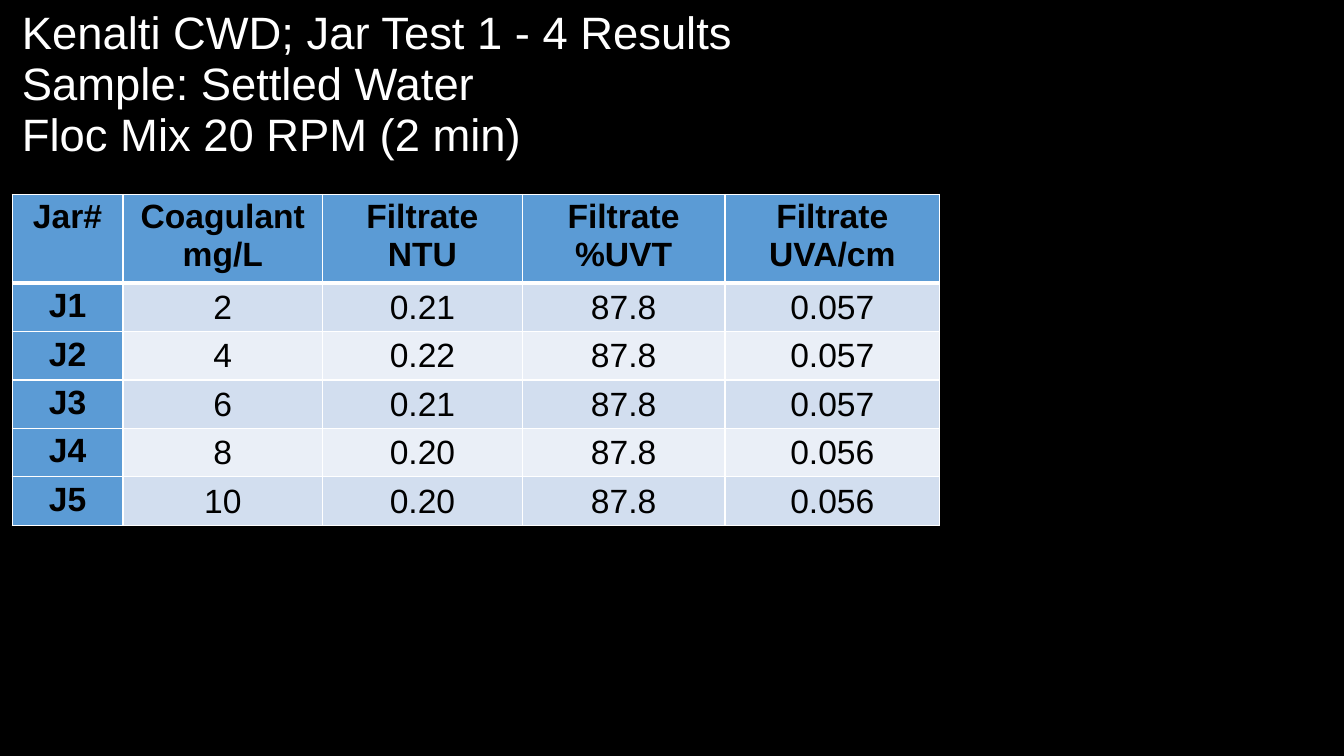
from lxml.etree import SubElement
from pptx import Presentation
from pptx.dml.color import RGBColor
from pptx.enum.text import MSO_ANCHOR as Anchor, PP_ALIGN as Align
from pptx.oxml.ns import qn
from pptx.util import Inches, Pt

COLORS = {
    "background": "000000",
    "title": "FFFFFF",
    "text": "000000",
    "border": "FFFFFF",
    "header": "5B9BD5",
    "odd_row": "D2DEEF",
    "even_row": "EAEFF7",
}
FONT = "Arial"
TITLE_LINES = [
    "Kenalti CWD; Jar Test 1 - 4 Results ",
    "Sample: Settled Water",
    "Floc Mix 20 RPM (2 min)",
]
RESULTS = [
    ["Jar#", "Coagulant\nmg/L", "Filtrate\nNTU", "Filtrate\n%UVT", "Filtrate\nUVA/cm"],
    ["J1", "2", "0.21", "87.8", "0.057"],
    ["J2", "4", "0.22", "87.8", "0.057"],
    ["J3", "6", "0.21", "87.8", "0.057"],
    ["J4", "8", "0.20", "87.8", "0.056"],
    ["J5", "10", "0.20", "87.8", "0.056"],
]
COLUMN_WIDTHS = [1.1, 1.98, 1.98, 2.01, 2.13]
HEADER_HEIGHT = 0.84
ROW_HEIGHT = 0.47


def rgb(name):
    return RGBColor.from_string(COLORS[name])


def style_text(para, size, color, bold=False):
    for span in para.runs:
        span.font.name = FONT
        span.font.size = Pt(size)
        span.font.bold = bold
        span.font.color.rgb = rgb(color)


def add_title(page):
    box = page.shapes.add_textbox(Inches(0.12), Inches(0.12), Inches(13.03), Inches(1.45))
    frame = box.text_frame
    frame.word_wrap = True
    frame.vertical_anchor = Anchor.MIDDLE
    para = frame.paragraphs[0]
    para.text = "\v".join(TITLE_LINES)
    para.line_spacing = 0.94
    style_text(para, 32.4, "title")


def set_borders(cell, top, bottom):
    """Draw the four cell edges; top and bottom widths are in points."""
    properties = cell._tc.get_or_add_tcPr()
    edges = {"a:lnL": 1, "a:lnR": 1, "a:lnT": top, "a:lnB": bottom}
    for index, (tag, width) in enumerate(edges.items()):
        line = SubElement(properties, qn(tag), w=str(Pt(width)))
        fill = SubElement(line, qn("a:solidFill"))
        SubElement(fill, qn("a:srgbClr"), val=COLORS["border"])
        properties.insert(index, line)


def fill_cell(cell, text, row, column):
    is_heading = row == 0 or column == 0
    if is_heading:
        color = "header"
        cell.margin_top = cell.margin_bottom = Inches(0.04)
    else:
        color = "odd_row" if row % 2 else "even_row"
        cell.vertical_anchor = Anchor.MIDDLE
        cell.margin_left = cell.margin_right = cell.margin_top = Inches(0.01)
        cell.margin_bottom = Inches(0)
    cell.fill.solid()
    cell.fill.fore_color.rgb = rgb(color)
    cell.text_frame.text = text
    for para in cell.text_frame.paragraphs:
        para.alignment = Align.CENTER
        style_text(para, 24, "text", is_heading)
    set_borders(cell, top=3 if row == 1 else 1, bottom=3 if row == 0 else 1)


def add_results_table(page):
    heights = [HEADER_HEIGHT] + [ROW_HEIGHT] * (len(RESULTS) - 1)
    table = page.shapes.add_table(
        len(heights), len(COLUMN_WIDTHS), Inches(0.12), Inches(1.93),
        Inches(sum(COLUMN_WIDTHS)), Inches(sum(heights)),
    ).table
    table.first_col = True
    for column, width in zip(table.columns, COLUMN_WIDTHS):
        column.width = Inches(width)
    for row, (height, values) in enumerate(zip(heights, RESULTS)):
        table.rows[row].height = Inches(height)
        for column, text in enumerate(values):
            fill_cell(table.cell(row, column), text, row, column)


def main():
    deck = Presentation()
    deck.slide_width = Inches(13.33)
    deck.slide_height = Inches(7.5)
    page = deck.slides.add_slide(deck.slide_layouts[6])
    page.background.fill.solid()
    page.background.fill.fore_color.rgb = rgb("background")
    add_title(page)
    add_results_table(page)
    deck.save("out.pptx")


if __name__ == "__main__":
    main()
